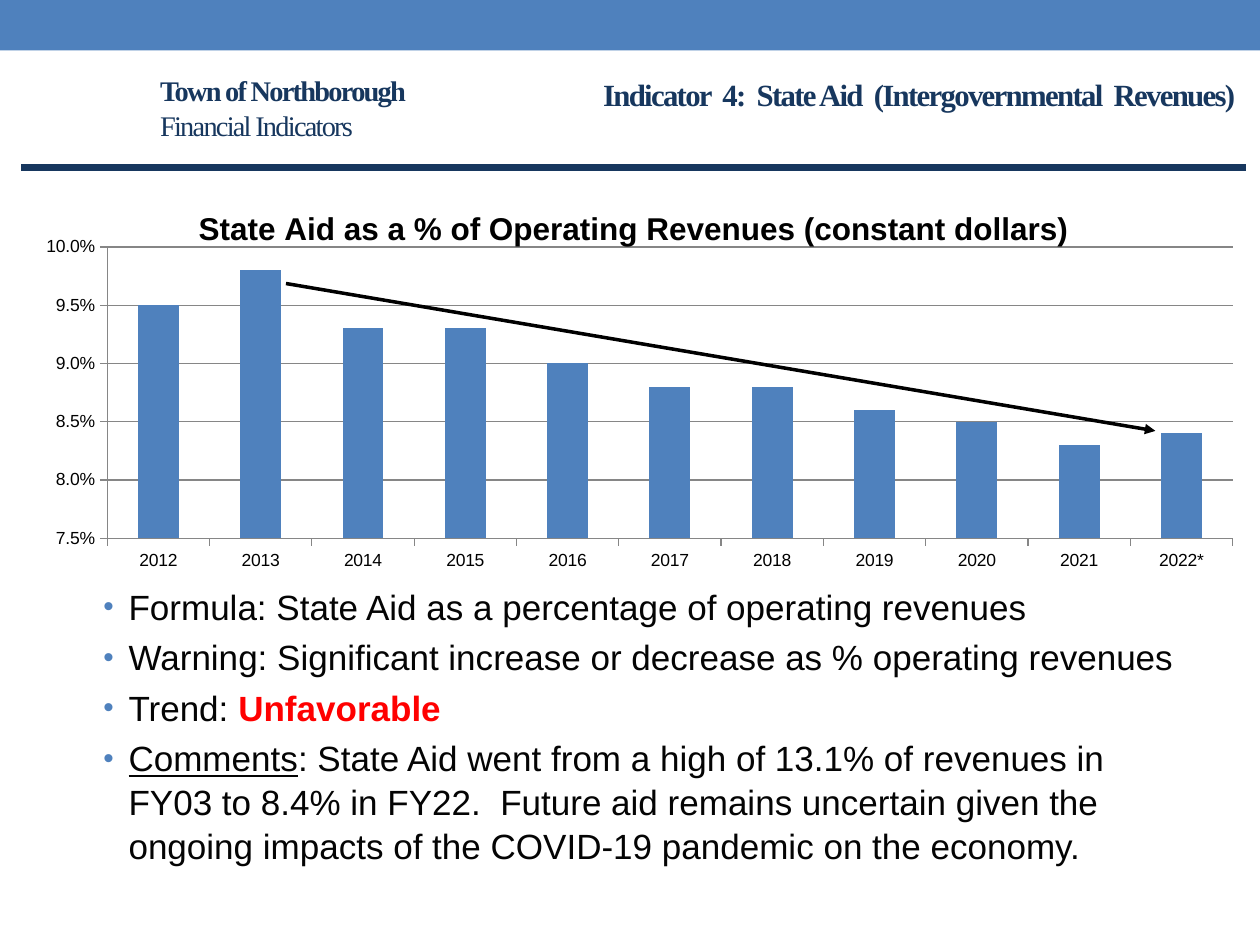
import pptx
import pptx.chart.data
import pptx.dml.color
import pptx.enum.chart
import pptx.enum.shapes
import pptx.enum.text
import pptx.oxml
import pptx.oxml.ns
import pptx.util

Inches, Pt = pptx.util.Inches, pptx.util.Pt
RGBColor = pptx.dml.color.RGBColor

BLUE = RGBColor(0x4F, 0x81, 0xBD)
NAVY = RGBColor(0x17, 0x37, 0x5E)
INK = RGBColor(0x04, 0x04, 0x04)
BLACK = RGBColor(0, 0, 0)
GRAY = RGBColor(0x86, 0x86, 0x86)
RED = RGBColor(0xFF, 0, 0)

TOWN, SUBTITLE = "Town of Northborough", "Financial Indicators"
INDICATOR = "Indicator  4:  State Aid  (Intergovernmental  Revenues)"
CHART_TITLE = "State Aid as a % of Operating Revenues (constant dollars)"
STATE_AID = {
    "2012": 0.095, "2013": 0.098, "2014": 0.093, "2015": 0.093,
    "2016": 0.09, "2017": 0.088, "2018": 0.088, "2019": 0.086,
    "2020": 0.085, "2021": 0.083, "2022*": 0.084,
}
PLAIN, ALERT, UNDERLINED = "plain", "alert", "underlined"
BULLETS = [
    [("Formula: State Aid as a percentage of operating revenues", PLAIN)],
    [("Warning: Significant increase or decrease as % operating revenues", PLAIN)],
    [("Trend: ", PLAIN), ("Unfavorable", ALERT)],
    [("Comments", UNDERLINED),
     (": State Aid went from a high of 13.1% of revenues in FY03 to 8.4% in FY22."
      "  Future aid remains uncertain given the ongoing impacts of the COVID-19"
      " pandemic on the economy.", PLAIN)],
]
LINE_SPACING = 1.04


def xml(tag, **attributes):
    element = pptx.oxml.parse_xml(
        f'<{tag} {pptx.oxml.ns.nsdecls(tag.split(":")[0])}/>')
    for name, value in attributes.items():
        element.set(name, str(value))
    return element


def place(shape, left, top, width, height):
    shape.left, shape.top = Inches(left), Inches(top)
    shape.width, shape.height = Inches(width), Inches(height)


def style(span, font, size, color, bold=False, spacing=None):
    span.font.name, span.font.size = font, Pt(size)
    span.font.color.rgb, span.font.bold = color, bold
    if spacing is not None:
        span.font._element.set("spc", str(spacing))


def prepare(frame, anchor):
    frame.word_wrap = True
    frame.auto_size = pptx.enum.text.MSO_AUTO_SIZE.NONE
    frame.vertical_anchor = anchor


def add_line(slide, start, end, color, width, arrow=False):
    line = slide.shapes.add_connector(
        pptx.enum.shapes.MSO_CONNECTOR.STRAIGHT,
        *(Inches(value) for value in start + end))
    line.line.color.rgb, line.line.width = color, Pt(width)
    if arrow:
        line.line._get_or_add_ln().append(xml("a:tailEnd", type="triangle"))
    line._element.spPr.append(xml("a:effectLst"))


def manual_layout(**settings):
    """Chart layout whose lengths are shares of the chart's size."""
    layout, manual = xml("c:layout"), xml("c:manualLayout")
    for name, value in settings.items():
        manual.append(xml(f"c:{name}", val=value))
    layout.append(manual)
    return layout


def add_headings(slide):
    middle = pptx.enum.text.MSO_ANCHOR.MIDDLE
    title = slide.shapes.title
    place(title, 1.17, 0.56, 2.2, 0.58)
    prepare(title.text_frame, middle)
    para = title.text_frame.paragraphs[0]
    para.text = f"{TOWN}\v{SUBTITLE}"
    para.alignment = pptx.enum.text.PP_ALIGN.LEFT
    para.line_spacing = LINE_SPACING
    for span, bold in zip(para.runs, (True, False)):
        style(span, "Times New Roman", 16.2, NAVY, bold, -100)

    box = slide.shapes.add_textbox(0, 0, 0, 0)
    place(box, 4.42, 0.42, 5.48, 0.66)
    prepare(box.text_frame, middle)
    para = box.text_frame.paragraphs[0]
    para.text = INDICATOR
    para.alignment = pptx.enum.text.PP_ALIGN.RIGHT
    style(para.runs[0], "Times New Roman", 17.6, NAVY, True, -100)


def add_bullets(body):
    place(body, 0.42, 4.58, 9, 2.42)
    frame = body.text_frame
    prepare(frame, pptx.enum.text.MSO_ANCHOR.TOP)
    for index, spans in enumerate(BULLETS):
        para = frame.add_paragraph() if index else frame.paragraphs[0]
        para.level = 1
        para.space_before, para.line_spacing = Pt(4), LINE_SPACING
        properties = para._p.get_or_add_pPr()
        properties.set("marL", str(Inches(0.5)))
        properties.set("indent", str(Inches(-0.2)))
        bullet_color = xml("a:buClr")
        bullet_color.append(xml("a:srgbClr", val=BLUE))
        properties.extend([
            bullet_color, xml("a:buSzPct", val=85000),
            xml("a:buFont", typeface="Arial"), xml("a:buChar", char="•")])
        for text, kind in spans:
            span = para.add_run()
            span.text = text
            style(span, "Arial", 20, RED if kind == ALERT else INK, kind == ALERT)
            span.font.underline = kind == UNDERLINED


def add_state_aid_chart(slide):
    chart_data = pptx.chart.data.CategoryChartData(number_format="0.0%")
    chart_data.categories = list(STATE_AID)
    chart_data.add_series(CHART_TITLE, list(STATE_AID.values()))
    chart = slide.shapes.add_chart(
        pptx.enum.chart.XL_CHART_TYPE.COLUMN_CLUSTERED,
        Inches(0.17), Inches(1.45), Inches(9.73), Inches(3.13), chart_data).chart
    chart.has_legend = False
    chart.font.name, chart.font.size = "Arial", Pt(10)
    chart.font.color.rgb = BLACK

    chart.has_title = True
    para = chart.chart_title.text_frame.paragraphs[0]
    para.text = CHART_TITLE
    style(para.runs[0], "Arial", 18, BLACK, True)
    title = chart.chart_title._element
    for old in title.findall(pptx.oxml.ns.qn("c:layout")):
        title.remove(old)
    title.insert(1, manual_layout(xMode="edge", yMode="edge", x=0.14, y=0.05))

    plot = chart.plots[0]
    plot.gap_width, plot.vary_by_categories = 150, False
    fill = plot.series[0].format.fill
    fill.solid()
    fill.fore_color.rgb = BLUE
    area = chart._chartSpace.chart.plotArea
    for old in area.findall(pptx.oxml.ns.qn("c:layout")):
        area.remove(old)
    area.insert(0, manual_layout(
        layoutTarget="inner", xMode="edge", yMode="edge",
        x=0.07, y=0.163, w=0.918, h=0.739))

    values = chart.value_axis
    values.minimum_scale, values.maximum_scale = 0.075, 0.1
    values.major_unit = 0.005
    values.tick_labels.number_format = "0.0%"
    values.tick_labels.number_format_is_linked = False
    values.has_major_gridlines = True
    lines = [values.major_gridlines.format.line]
    for axis in (values, chart.category_axis):
        axis.major_tick_mark = pptx.enum.chart.XL_TICK_MARK.OUTSIDE
        lines.append(axis.format.line)
    for line in lines:
        line.color.rgb, line.width = GRAY, Pt(0.75)


def main():
    deck = pptx.Presentation()
    deck.slide_width, deck.slide_height = Inches(10), Inches(7.5)
    slide = deck.slides.add_slide(deck.slide_layouts[1])
    band = slide.shapes.add_shape(
        pptx.enum.shapes.MSO_SHAPE.RECTANGLE, 0, 0, deck.slide_width, Inches(0.4))
    band.shadow.inherit = False
    band.fill.solid()
    band.fill.fore_color.rgb = BLUE
    band.line.fill.background()
    add_headings(slide)
    add_bullets(slide.placeholders[1])
    add_line(slide, (0.17, 1.33), (9.89, 1.33), NAVY, 4.25)
    add_state_aid_chart(slide)
    add_line(slide, (2.27, 2.25), (9.17, 3.42), BLACK, 2, arrow=True)
    deck.save("out.pptx")


if __name__ == "__main__":
    main()
